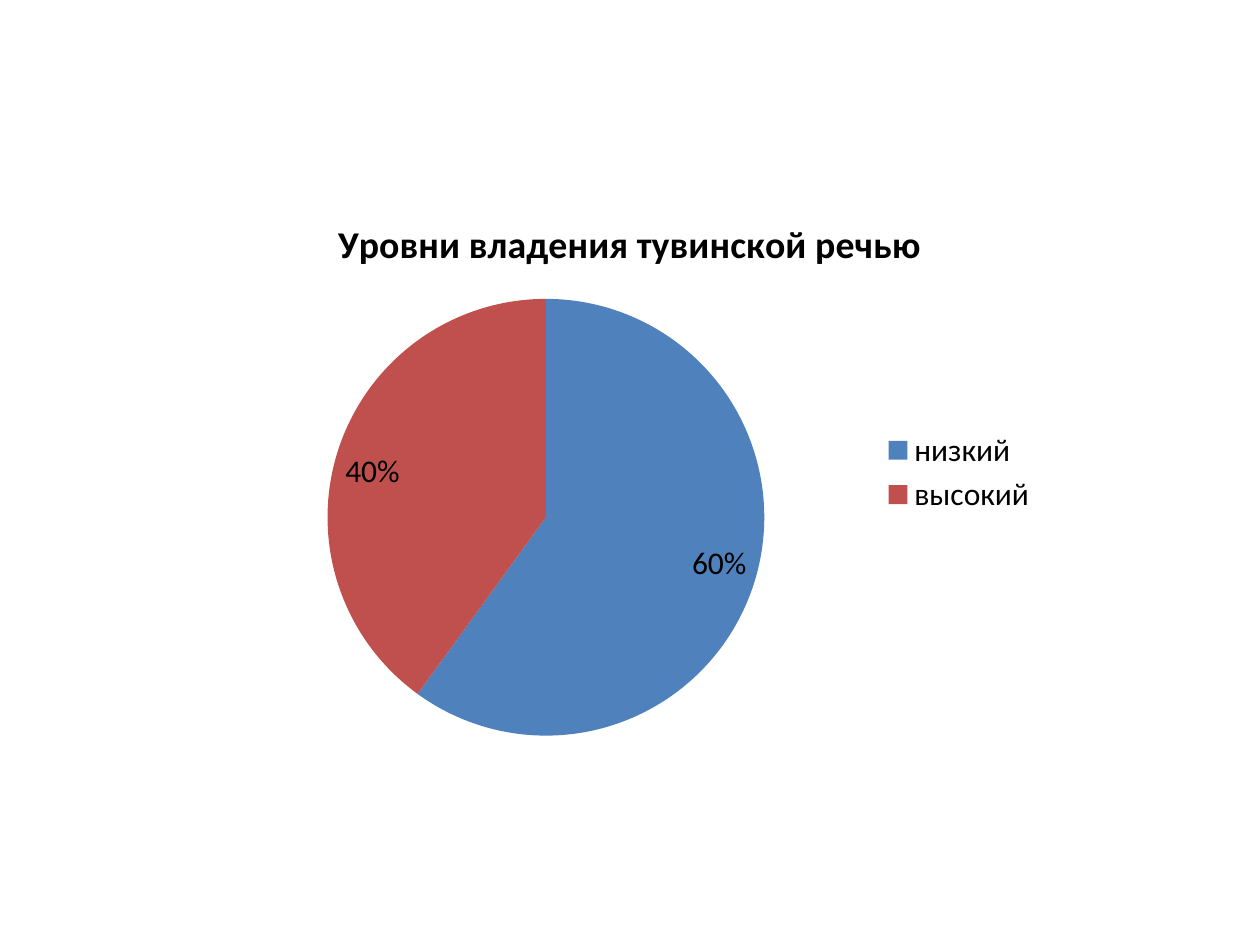
"""Build a slide with a pie chart of Tuvan speech proficiency levels."""
from dataclasses import dataclass

from lxml.etree import SubElement
from pptx import Presentation
from pptx.chart.chart import Chart
from pptx.chart.data import CategoryChartData
from pptx.dml.color import RGBColor
from pptx.enum.chart import XL_CHART_TYPE, XL_LABEL_POSITION, XL_LEGEND_POSITION
from pptx.oxml.ns import qn
from pptx.text.text import Font
from pptx.util import Pt


@dataclass(frozen=True)
class Level:
    name: str
    share: float
    color: str


LEVELS = [Level("низкий", 0.6, "4F81BD"), Level("высокий", 0.4, "C0504D")]
PIE_AREA = {"x": 0.14, "y": 0.19, "w": 0.52, "h": 0.78}


def rgb(color: str) -> RGBColor:
    return RGBColor.from_string(color)


def style_font(font: Font, size: float, bold: bool = False) -> None:
    font.name = "Calibri"
    font.size = Pt(size)
    font.bold = bold
    font.color.rgb = rgb("000000")


def place_pie(chart: Chart) -> None:
    plot_area = chart.element.find(".//" + qn("c:plotArea"))
    layout = plot_area.find(qn("c:layout"))
    if layout is None:
        layout = SubElement(plot_area, qn("c:layout"))
        plot_area.insert(0, layout)
    manual = SubElement(layout, qn("c:manualLayout"))
    settings = {"layoutTarget": "inner", "xMode": "edge", "yMode": "edge", **PIE_AREA}
    for tag, value in settings.items():
        SubElement(manual, qn(f"c:{tag}")).set("val", str(value))


def style_title(chart: Chart) -> None:
    chart.has_title = True
    heading = chart.chart_title.text_frame
    heading.text = "Уровни владения тувинской речью"
    style_font(heading.paragraphs[0].runs[0].font, 21.6, bold=True)
    chart.chart_title.include_in_layout = False


def style_legend(chart: Chart) -> None:
    chart.has_legend = True
    chart.legend.position = XL_LEGEND_POSITION.RIGHT
    chart.legend.include_in_layout = False
    style_font(chart.legend.font, 18)


def style_slices(chart: Chart) -> None:
    pie = chart.plots[0]
    pie.vary_by_categories = True
    for index, level in enumerate(LEVELS):
        fill = pie.series[0].points[index].format.fill
        fill.solid()
        fill.fore_color.rgb = rgb(level.color)
    pie.has_data_labels = True
    labels = pie.data_labels
    labels.show_value = True
    labels.show_percentage = False
    labels.number_format = "0%"
    labels.number_format_is_linked = False
    labels.position = XL_LABEL_POSITION.INSIDE_END
    style_font(labels.font, 18)


def main() -> None:
    presentation = Presentation()
    presentation.slide_width, presentation.slide_height = Pt(720), Pt(540)
    slide = presentation.slides.add_slide(presentation.slide_layouts[6])

    proficiency = CategoryChartData(number_format="0%")
    proficiency.categories = [level.name for level in LEVELS]
    proficiency.add_series("Series 1", [level.share for level in LEVELS])
    chart = slide.shapes.add_chart(
        XL_CHART_TYPE.PIE, Pt(120), Pt(110), Pt(480), Pt(320), proficiency
    ).chart
    style_font(chart.font, 18)
    style_title(chart)
    style_legend(chart)
    style_slices(chart)
    place_pie(chart)
    presentation.save("out.pptx")


if __name__ == "__main__":
    main()
